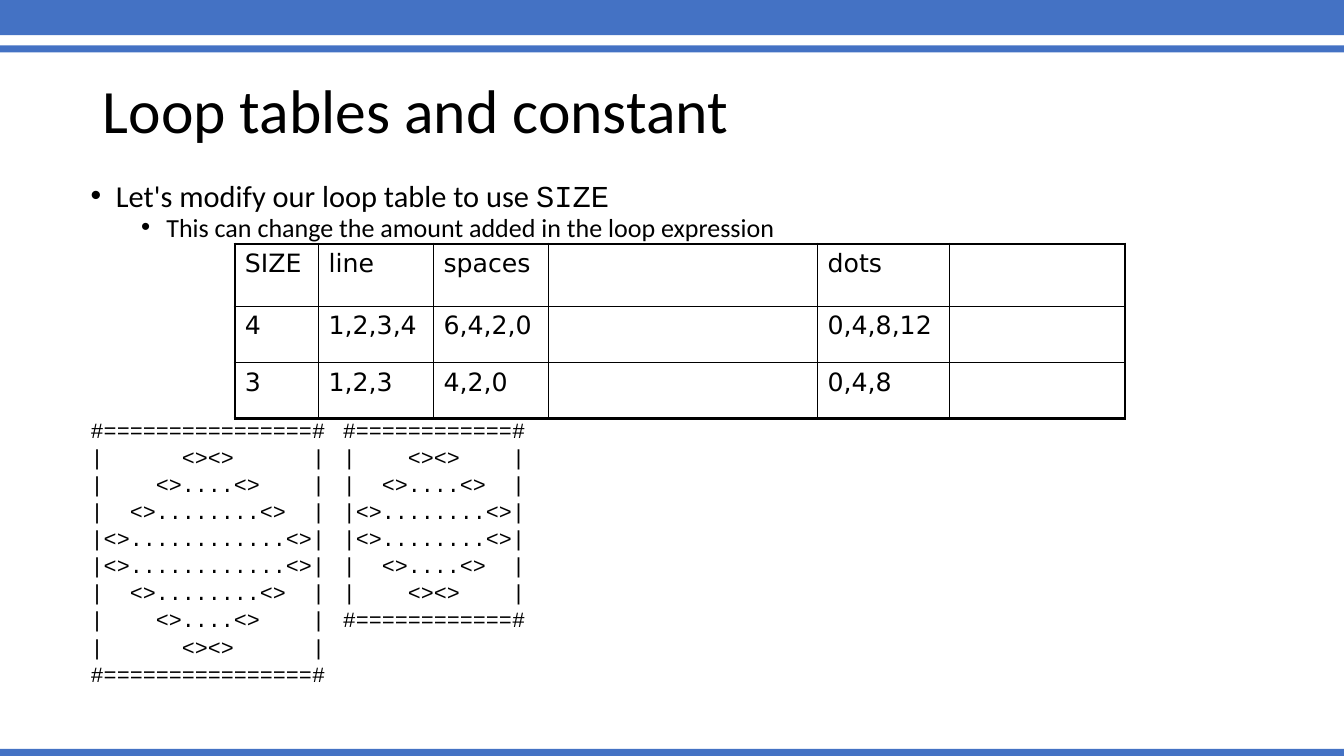
from pptx import Presentation
from pptx.dml.color import RGBColor
from pptx.enum import shapes, text
from pptx.oxml import parse_xml
from pptx.oxml.ns import nsdecls
from pptx.util import Inches, Pt

COLORS = {"bar": "4472C4", "ink": "000000"}
SANS, MONO, TABLE_FONT = "Calibri", "Courier New", "DejaVu Sans"
WIDTH, HEIGHT = 13.33, 7.5

TITLE = "Loop tables and constant"
# level, size, space before, (text, font) runs
BULLETS = [
    (0, 21.7, 10, [("Let's modify our loop table to use ", SANS), ("SIZE", MONO)]),
    (1, 18.6, 5, [("This can change the amount added in the loop expression", SANS)]),
]
LOOP_TABLE = [
    ["SIZE", "line", "spaces", "", "dots", ""],
    ["4", "1,2,3,4", "6,4,2,0", "", "0,4,8,12", ""],
    ["3", "1,2,3", "4,2,0", "", "0,4,8", ""],
]
COLUMNS = [0.83, 1.14, 1.14, 2.67, 1.31, 1.74]
ROWS = [0.62, 0.56, 0.55]
BARS = [(-0.03, 0.38), (0.45, 0.07), (7.43, 0.07)]  # top, height
MIRROR_SIZES = (4, 3)
MIRROR_TABS = (3.5, 3.1)  # second mirror: first line, other lines
MIRROR_GAP, MIRROR_PITCH, MIRROR_PT = 124, 19.36, 15.5


def mirror(size):
    """Lines of the ASCII mirror, by the rule in the loop table."""
    edge = "#" + "=" * (4 * size) + "#"
    half = []
    for line in range(1, size + 1):
        spaces, dots = " " * (2 * size - 2 * line), "." * (4 * line - 4)
        half.append(f"|{spaces}<>{dots}<>{spaces}|")
    return [edge] + half + half[::-1] + [edge]


def add_text(p, words, font=SANS, size=18, color="ink"):
    r = p.add_run()
    r.text = words
    r.font.name, r.font.size = font, Pt(size)
    r.font.color.rgb = RGBColor.from_string(COLORS[color])


def set_indent(p, left, hang, bullet):
    pPr = p._p.get_or_add_pPr()
    pPr.set("marL", str(Inches(left)))
    pPr.set("indent", str(-Inches(hang)))
    mark = '<a:buChar %s char="•"/>' if bullet else "<a:buNone %s/>"
    pPr.append(parse_xml(mark % nsdecls("a")))
    return pPr


def set_borders(cell, widths):
    tcPr = cell._tc.get_or_add_tcPr()
    for i, (side, width) in enumerate(widths.items()):
        tcPr.insert(i, parse_xml(
            f'<a:ln{side} {nsdecls("a")} w="{Pt(width)}"><a:solidFill>'
            f'<a:srgbClr val="{COLORS["ink"]}"/></a:solidFill></a:ln{side}>'))


def place(sp, left, top, width, height, anchor):
    sp.left, sp.top = Inches(left), Inches(top)
    sp.width, sp.height = Inches(width), Inches(height)
    tf = sp.text_frame
    tf.auto_size = text.MSO_AUTO_SIZE.NONE
    tf.vertical_anchor = anchor
    return tf


def add_bars(s):
    for top, height in BARS:
        bar = s.shapes.add_shape(shapes.MSO_SHAPE.RECTANGLE, 0, Inches(top),
                                 Inches(WIDTH), Inches(height))
        bar.shadow.inherit = False
        bar.fill.solid()
        bar.fill.fore_color.rgb = RGBColor.from_string(COLORS["bar"])
        bar.line.fill.background()


def add_body(tf):
    p = tf.paragraphs[0]
    for i, (level, size, before, runs) in enumerate(BULLETS):
        p = tf.add_paragraph() if i else p
        p.level, p.line_spacing, p.space_before = level, 0.7, Pt(before)
        set_indent(p, 0.25 + 0.5 * level, 0.25, True)
        for words, font in runs:
            add_text(p, words, font, size)
    large, small = map(mirror, MIRROR_SIZES)
    for i, line in enumerate(large):
        p = tf.add_paragraph()
        p.line_spacing = Pt(MIRROR_PITCH)
        p.space_before = Pt(0 if i else MIRROR_GAP)
        pPr = set_indent(p, 0, 0, False)
        if i < len(small):
            tab = Inches(MIRROR_TABS[min(i, 1)])
            pPr.append(parse_xml(f'<a:tabLst {nsdecls("a")}>'
                                 f'<a:tab pos="{tab}" algn="l"/></a:tabLst>'))
            line += "\t" + small[i]
        add_text(p, line, MONO, MIRROR_PT)


def add_loop_table(s):
    n_rows, n_cols = len(ROWS), len(COLUMNS)
    table = s.shapes.add_table(n_rows, n_cols, Inches(2.33), Inches(2.42),
                               Inches(sum(COLUMNS)), Inches(sum(ROWS))).table
    table.first_row = table.horz_banding = False
    for column, width in zip(table.columns, COLUMNS):
        column.width = Inches(width)
    for i, values in enumerate(LOOP_TABLE):
        table.rows[i].height = Inches(ROWS[i])
        for j, value in enumerate(values):
            cell = table.cell(i, j)
            cell.fill.background()
            outer = {"L": j == 0, "R": j == n_cols - 1, "T": i == 0, "B": i == n_rows - 1}
            set_borders(cell, {side: 2.25 if out else 1 for side, out in outer.items()})
            if value:
                add_text(cell.text_frame.paragraphs[0], value, TABLE_FONT)


def main():
    prs = Presentation()
    prs.slide_width, prs.slide_height = Inches(WIDTH), Inches(HEIGHT)
    s = prs.slides.add_slide(prs.slide_layouts[1])
    add_bars(s)
    title = place(s.shapes.title, 0.92, 0.4, 11.5, 1.45, text.MSO_ANCHOR.MIDDLE)
    p = title.paragraphs[0]
    p.alignment, p.line_spacing = text.PP_ALIGN.LEFT, 0.9
    add_text(p, TITLE, size=44)
    add_body(place(s.placeholders[1], 0.8, 1.81, 11.5, 5.23, text.MSO_ANCHOR.TOP))
    add_loop_table(s)
    prs.save("out.pptx")


if __name__ == "__main__":
    main()
